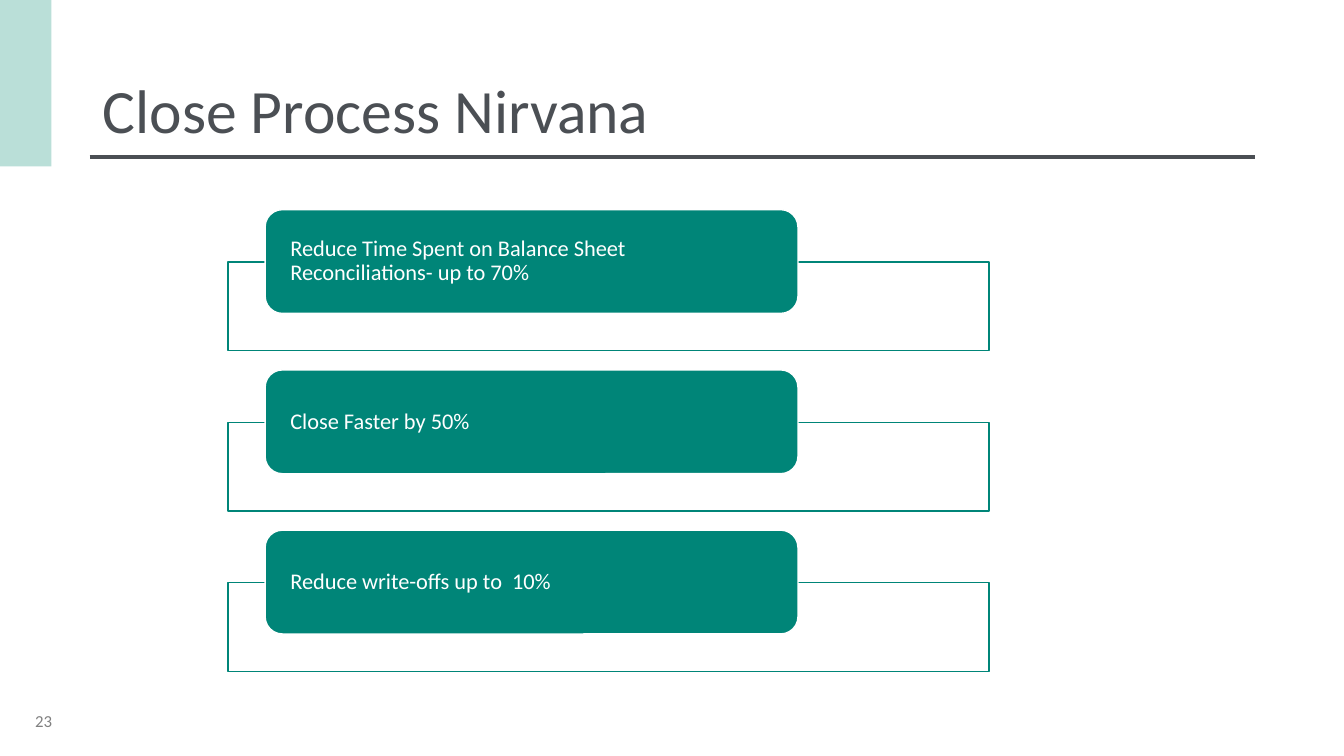
from lxml import etree
from pptx import Presentation
from pptx.dml.color import RGBColor
from pptx.enum.shapes import MSO_CONNECTOR as Connector, MSO_SHAPE as Shape
from pptx.enum.text import MSO_ANCHOR as Anchor, MSO_AUTO_SIZE as AutoSize, PP_ALIGN as Align
from pptx.oxml.ns import qn
from pptx.util import Inches, Pt

FONT = "Calibri"
TEAL, MINT, SLATE, GREY, WHITE = "008578", "86C8BC", "4B4F54", "808080", "FFFFFF"
GOALS = [
    "Reduce Time Spent on Balance Sheet Reconciliations- up to 70%",
    "Close Faster by 50%",
    "Reduce write-offs up to  10%",
]


def color(value):
    return RGBColor.from_string(value)


def write(shape, text, size, text_color, spacing=1.0, side_inset=0.1, end_inset=0.05):
    frame = shape.text_frame
    frame.word_wrap = True
    frame.auto_size = AutoSize.NONE
    frame.vertical_anchor = Anchor.MIDDLE
    frame.margin_left = frame.margin_right = Inches(side_inset)
    frame.margin_top = frame.margin_bottom = Inches(end_inset)
    para = frame.paragraphs[0]
    para.alignment = Align.LEFT
    para.line_spacing = spacing
    span = para.add_run()
    span.text = text
    span.font.name, span.font.size = FONT, Pt(size)
    span.font.color.rgb = color(text_color)


def add_box(page, kind, left, top, width, height, fill, line=None, opacity=100):
    box = page.shapes.add_shape(kind, Inches(left), Inches(top), Inches(width), Inches(height))
    box.shadow.inherit = False
    box.fill.solid()
    box.fill.fore_color.rgb = color(fill)
    if opacity < 100:
        fill_color = box.fill._xPr.find(qn("a:solidFill"))[0]
        etree.SubElement(fill_color, qn("a:alpha")).set("val", str(opacity * 1000))
    if line:
        box.line.color.rgb = color(line)
        box.line.width = Pt(1)
    else:
        box.line.fill.background()
    return box


def add_header(page, left, top, width, height):
    # Corner accent
    add_box(page, Shape.RECTANGLE, 0, 0, 0.51, 1.65, MINT, opacity=57)

    # Rule under the title
    rule_y = Inches(top + 1.16)
    rule = page.shapes.add_connector(
        Connector.STRAIGHT, Inches(left - 0.03), rule_y, Inches(left + width + 0.03), rule_y)
    rule.line.color.rgb = color(SLATE)
    rule.line.width = Pt(3)
    etree.SubElement(rule._element.spPr, qn("a:effectLst"))

    # Title
    title = page.shapes.title
    title.left, title.top = Inches(left), Inches(top)
    title.width, title.height = Inches(width), Inches(height)
    write(title, "Close Process Nirvana", 44, SLATE, spacing=0.9)


def add_goals(page, left, top, width, pitch):
    for row, goal in enumerate(GOALS):
        row_top = top + row * pitch
        # Outlined panel behind the label
        add_box(page, Shape.RECTANGLE, left, row_top + 0.52, width, 0.88, WHITE, TEAL, opacity=90)
        # Rounded label
        label = add_box(page, Shape.ROUNDED_RECTANGLE, left + 0.37, row_top,
                        width * 0.7, 1.03, TEAL, WHITE)
        write(label, goal, 16, WHITE, spacing=0.9, side_inset=0.2, end_inset=0)


def add_page_number(page, left, top, width, height):
    box = page.shapes.add_textbox(Inches(left), Inches(top), Inches(width), Inches(height))
    write(box, "23", 12, GREY)


def main():
    deck = Presentation()
    deck.slide_width, deck.slide_height = Inches(13.33), Inches(7.5)
    page = deck.slides.add_slide(deck.slide_layouts[5])
    add_header(page, 0.92, 0.4, 11.5, 1.45)
    add_goals(page, 2.26, 2.08, 7.55, 1.59)
    add_page_number(page, 0.25, 6.95, 0.51, 0.4)
    deck.save("out.pptx")


if __name__ == "__main__":
    main()
